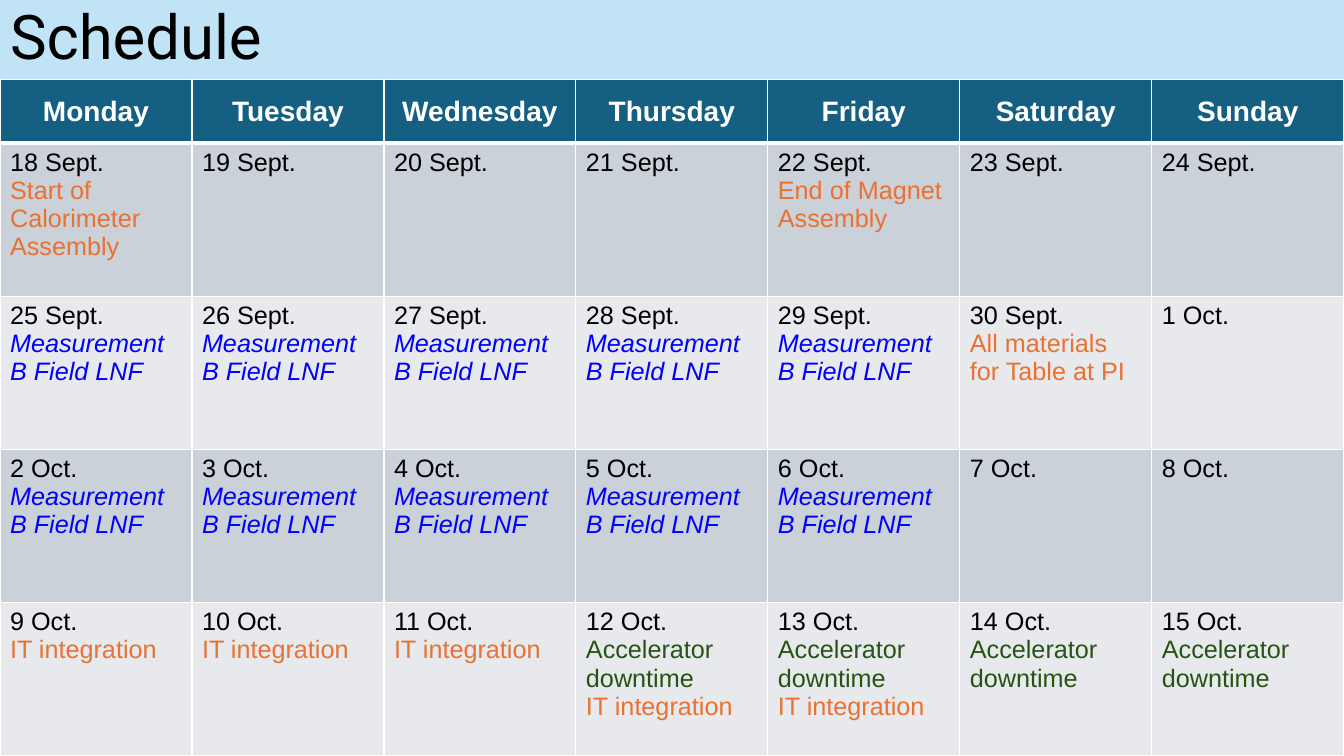
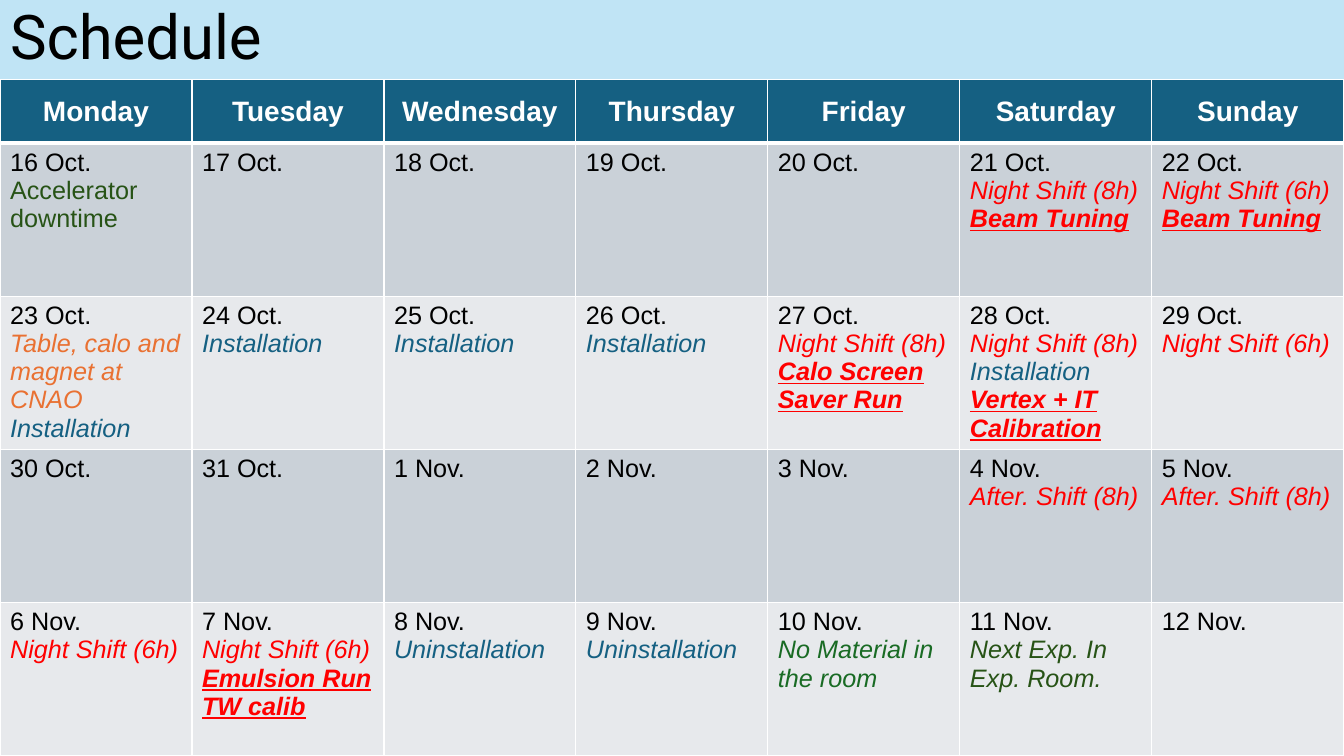
from dataclasses import dataclass

from lxml import etree
from pptx import Presentation
from pptx.dml.color import RGBColor
from pptx.enum.text import MSO_ANCHOR as Anchor, MSO_AUTO_SIZE as AutoSize, PP_ALIGN as Align
from pptx.oxml.ns import qn
from pptx.util import Inches, Pt

# Content: events by date; each event is (style, text)
TITLE = "Schedule"
WEEKDAYS = ["Monday", "Tuesday", "Wednesday", "Thursday", "Friday", "Saturday", "Sunday"]
MONTH_SPANS = [("Sept.", 18, 30), ("Oct.", 1, 31), ("Nov.", 1, 12)]
WEEKS_PER_SLIDE = 4

FIELD = ("measurement", "Measurement B Field LNF")
INTEGRATION = ("milestone", "IT integration")
DOWNTIME = ("downtime", "Accelerator downtime")
INSTALLATION = ("installation", "Installation")
UNINSTALLATION = ("installation", "Uninstallation")
NIGHT_8H = ("shift", "Night Shift (8h)")
NIGHT_6H = ("shift", "Night Shift (6h)")
AFTERNOON = ("shift", "After. Shift (8h)")
TUNING = ("run", "Beam Tuning")

EVENTS = {
    "18 Sept.": [("milestone", "Start of Calorimeter Assembly")],
    "22 Sept.": [("milestone", "End of Magnet Assembly")],
    **{f"{day} Sept.": [FIELD] for day in range(25, 30)},
    "30 Sept.": [("milestone", "All materials for Table at PI")],
    **{f"{day} Oct.": [FIELD] for day in range(2, 7)},
    **{f"{day} Oct.": [INTEGRATION] for day in range(9, 12)},
    **{f"{day} Oct.": [DOWNTIME, INTEGRATION] for day in (12, 13)},
    **{f"{day} Oct.": [DOWNTIME] for day in range(14, 17)},
    "21 Oct.": [NIGHT_8H, TUNING],
    "22 Oct.": [NIGHT_6H, TUNING],
    "23 Oct.": [("delivery", "Table, calo and magnet at CNAO"), INSTALLATION],
    **{f"{day} Oct.": [INSTALLATION] for day in range(24, 27)},
    "27 Oct.": [NIGHT_8H, ("run", "Calo Screen Saver Run")],
    "28 Oct.": [NIGHT_8H, INSTALLATION, ("run", "Vertex + IT Calibration")],
    "29 Oct.": [NIGHT_6H],
    **{f"{day} Nov.": [AFTERNOON] for day in (4, 5)},
    "6 Nov.": [NIGHT_6H],
    "7 Nov.": [NIGHT_6H, ("run", "Emulsion Run"), ("run", "TW calib")],
    **{f"{day} Nov.": [UNINSTALLATION] for day in (8, 9)},
    "10 Nov.": [("clearance", "No Material in the room")],
    "11 Nov.": [("handover", "Next Exp. In Exp. Room.")],
}


@dataclass(frozen=True)
class Theme:
    title_font: str = "Roboto"
    body_font: str = "Arial"
    title_size: int = 44
    header_size: int = 20
    body_size: int = 18
    title_band: str = "C0E4F5"
    header_fill: str = "156082"
    week_fills: tuple = ("CAD1D8", "E7E9EC")
    white: str = "FFFFFF"
    black: str = "000000"
    thin: int = 1
    thick: int = 3


THEME = Theme()

# Text styles: colour, bold, italic, underline
STYLES = {
    "weekday": (THEME.white, True, False, False),
    "date": (THEME.black, False, False, False),
    "milestone": ("E97132", False, False, False),
    "delivery": ("E97132", False, True, False),
    "measurement": ("0000FF", False, True, False),
    "downtime": ("275316", False, False, False),
    "handover": ("275316", False, True, False),
    "clearance": ("196B24", False, True, False),
    "installation": (THEME.header_fill, False, True, False),
    "shift": ("FF0000", False, True, False),
    "run": ("FF0000", True, True, True),
}

# Layout
SLIDE_W, SLIDE_H = Inches(13.33), Inches(7.5)
BAND_H = Inches(0.79)
HEADER_H = Inches(0.63)
COLUMN_W = SLIDE_W // len(WEEKDAYS)
WEEK_H = (SLIDE_H - BAND_H - HEADER_H) // WEEKS_PER_SLIDE


def set_fill(target, colour):
    target.fill.solid()
    target.fill.fore_color.rgb = RGBColor.from_string(colour)


def style_font(font, name, size, colour, bold=False, italic=False, underline=False):
    font.name, font.size = name, Pt(size)
    font.color.rgb = RGBColor.from_string(colour)
    font.bold, font.italic, font.underline = bold, italic, underline


def set_borders(cell, top, bottom):
    widths = {"L": THEME.thin, "R": THEME.thin, "T": top, "B": bottom}
    properties = cell._tc.get_or_add_tcPr()
    for side, width in widths.items():
        line = etree.SubElement(properties, qn(f"a:ln{side}"), w=str(Pt(width)))
        solid = etree.SubElement(line, qn("a:solidFill"))
        etree.SubElement(solid, qn("a:srgbClr"), val=THEME.white)


def fill_cell(cell, entries, size, fill, top=THEME.thin, bottom=THEME.thin):
    set_borders(cell, top, bottom)
    set_fill(cell, fill)
    cell.text_frame.text = "\n".join(text for _, text in entries)
    for paragraph, (style, _) in zip(cell.text_frame.paragraphs, entries):
        style_font(paragraph.runs[0].font, THEME.body_font, size, *STYLES[style])


def add_title(slide):
    title = slide.shapes.title
    title.left, title.top, title.width, title.height = 0, 0, SLIDE_W, BAND_H
    set_fill(title, THEME.title_band)
    frame = title.text_frame
    frame.text = TITLE
    frame.auto_size = AutoSize.NONE
    frame.vertical_anchor = Anchor.MIDDLE
    heading = frame.paragraphs[0]
    heading.alignment, heading.line_spacing = Align.LEFT, 0.9
    style_font(heading.runs[0].font, THEME.title_font, THEME.title_size, THEME.black)


def add_calendar(slide, weeks):
    calendar = slide.shapes.add_table(
        len(weeks) + 1, len(WEEKDAYS), 0, BAND_H, SLIDE_W, SLIDE_H - BAND_H
    ).table
    for column in calendar.columns:
        column.width = COLUMN_W
    for index, row in enumerate(calendar.rows):
        row.height = WEEK_H if index else HEADER_H

    # Weekday header
    for column, weekday in enumerate(WEEKDAYS):
        cell = calendar.cell(0, column)
        fill_cell(cell, [("weekday", weekday)], THEME.header_size,
                  THEME.header_fill, bottom=THEME.thick)
        cell.vertical_anchor = Anchor.MIDDLE
        cell.text_frame.paragraphs[0].alignment = Align.CENTER

    # One row a week
    for index, week in enumerate(weeks):
        for column, date in enumerate(week):
            entries = [("date", date), *EVENTS.get(date, [])]
            fill_cell(calendar.cell(index + 1, column), entries, THEME.body_size,
                      THEME.week_fills[index % 2],
                      top=THEME.thin if index else THEME.thick)


def main():
    deck = Presentation()
    deck.slide_width, deck.slide_height = SLIDE_W, SLIDE_H
    title_only = deck.slide_layouts[5]

    dates = [f"{day} {month}" for month, first, last in MONTH_SPANS
             for day in range(first, last + 1)]
    weeks = [dates[start:start + len(WEEKDAYS)]
             for start in range(0, len(dates), len(WEEKDAYS))]
    for start in range(0, len(weeks), WEEKS_PER_SLIDE):
        slide = deck.slides.add_slide(title_only)
        add_title(slide)
        add_calendar(slide, weeks[start:start + WEEKS_PER_SLIDE])
    deck.save("out.pptx")


if __name__ == "__main__":
    main()
